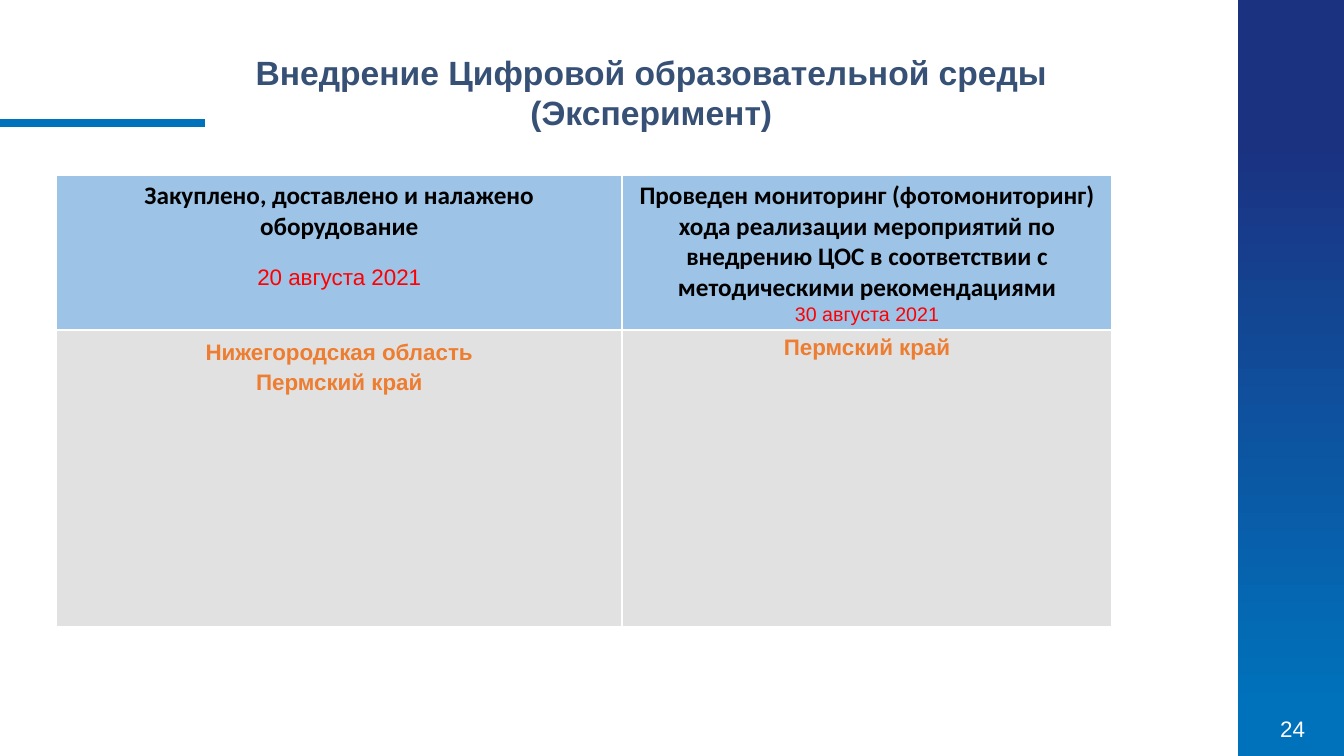
"""Build the slide on the digital education environment experiment."""
from lxml.etree import SubElement
from pptx import Presentation
from pptx.dml.color import RGBColor
from pptx.enum.shapes import MSO_CONNECTOR, MSO_SHAPE
from pptx.enum.text import MSO_ANCHOR, MSO_AUTO_SIZE, PP_ALIGN
from pptx.oxml.ns import qn
from pptx.util import Inches, Pt

WHITE = RGBColor(0xFF, 0xFF, 0xFF)
BLACK = RGBColor(0x00, 0x00, 0x00)
RED = RGBColor(0xFF, 0x00, 0x00)
ORANGE = RGBColor(0xED, 0x7D, 0x31)
NAVY = RGBColor(0x1B, 0x32, 0x81)
BLUE = RGBColor(0x00, 0x72, 0xBC)
TITLE_BLUE = RGBColor(0x37, 0x50, 0x75)
HEADER_FILL = RGBColor(0x9D, 0xC3, 0xE6)
BODY_FILL = RGBColor(0xE1, 0xE1, 0xE1)

COLUMN_WIDTHS = (5.61, 4.86)
ROW_HEIGHTS = (1.53, 2.94)
HEADERS = (
    ("Закуплено, доставлено и налажено оборудование", "20 августа 2021", 16, 17),
    ("Проведен мониторинг (фотомониторинг) хода реализации мероприятий по "
     "внедрению ЦОС в соответствии с методическими рекомендациями",
     "30 августа 2021", 14, 0),
)
REGIONS = (("Нижегородская область", "Пермский край"), ("Пермский край",))


def write_paragraph(frame, text, size, color, bold=False, font="Arial",
                    first=True, before=0, spacing=1.0):
    """Write one centred paragraph into a text frame."""
    paragraph = frame.paragraphs[0] if first else frame.add_paragraph()
    paragraph.alignment = PP_ALIGN.CENTER
    paragraph.line_spacing = spacing
    if before:
        paragraph.space_before = Pt(before)
    run = paragraph.add_run()
    run.text = text
    run.font.name = font
    run.font.size = Pt(size)
    run.font.bold = bold
    run.font.color.rgb = color


def add_title(slide):
    """Place and fill the title placeholder."""
    title = slide.shapes.title
    title.left, title.top = Inches(1.96), Inches(0.46)
    title.width, title.height = Inches(9), Inches(0.91)
    frame = title.text_frame
    frame.word_wrap = True
    frame.auto_size = MSO_AUTO_SIZE.NONE
    frame.vertical_anchor = MSO_ANCHOR.TOP
    write_paragraph(frame, "Внедрение Цифровой образовательной среды (Эксперимент)",
                    24, TITLE_BLUE, bold=True)


def add_side_band(slide):
    """Draw the gradient band along the right edge."""
    band = slide.shapes.add_shape(MSO_SHAPE.RECTANGLE, Inches(12.28), Inches(0),
                                  Inches(1.05), Inches(7.5))
    band.shadow.inherit = False
    band.line.fill.background()
    band.fill.gradient()
    band.fill.gradient_angle = 270
    stops = ((0.18, NAVY), (0.94, BLUE))
    for stop, (position, color) in zip(band.fill.gradient_stops, stops):
        stop.position = position
        stop.color.rgb = color


def add_page_number(slide):
    """Write the page number on the band."""
    box = slide.shapes.add_textbox(Inches(12.42), Inches(7.02),
                                   Inches(0.8), Inches(0.41))
    box.text_frame.word_wrap = True
    box.text_frame.vertical_anchor = MSO_ANCHOR.MIDDLE
    write_paragraph(box.text_frame, "24", 16, WHITE)


def add_accent_line(slide):
    """Draw the thick line beside the title."""
    line = slide.shapes.add_connector(MSO_CONNECTOR.STRAIGHT, Inches(0),
                                      Inches(1.22), Inches(2.03), Inches(1.22))
    line.line.color.rgb = BLUE
    line.line.width = Pt(6)
    SubElement(line._element.spPr, qn("a:effectLst"))


def style_cell(cell, color):
    """Give a cell white borders and a solid fill."""
    properties = cell._tc.get_or_add_tcPr()
    for side in ("lnL", "lnR", "lnT", "lnB"):
        border = SubElement(properties, qn(f"a:{side}"), w=str(Pt(1)))
        fill = SubElement(border, qn("a:solidFill"))
        SubElement(fill, qn("a:srgbClr"), val=str(WHITE))
    cell.fill.solid()
    cell.fill.fore_color.rgb = color


def add_stage_table(slide):
    """Add the table of stages, dates and regions."""
    table = slide.shapes.add_table(
        len(ROW_HEIGHTS), len(COLUMN_WIDTHS), Inches(0.56), Inches(1.74),
        Inches(sum(COLUMN_WIDTHS)), Inches(sum(ROW_HEIGHTS))).table
    for row, height in zip(table.rows, ROW_HEIGHTS):
        row.height = Inches(height)
    for index, width in enumerate(COLUMN_WIDTHS):
        table.columns[index].width = Inches(width)
        header, body = table.cell(0, index), table.cell(1, index)
        style_cell(header, HEADER_FILL)
        style_cell(body, BODY_FILL)
        stage, date, date_size, gap = HEADERS[index]
        write_paragraph(header.text_frame, stage, 18, BLACK, bold=True, font="Calibri")
        write_paragraph(header.text_frame, date, date_size, RED, first=False, before=gap)
        for number, region in enumerate(REGIONS[index]):
            write_paragraph(body.text_frame, region, 16, ORANGE, bold=True,
                            first=number == 0, spacing=1.2)
    last = table.cell(1, 1)
    last.margin_left = last.margin_right = Inches(0)
    last.margin_top = last.margin_bottom = Inches(0)


def main():
    """Build and save the presentation."""
    presentation = Presentation()
    presentation.slide_width = Inches(13.33)
    presentation.slide_height = Inches(7.5)
    slide = presentation.slides.add_slide(presentation.slide_layouts[5])
    add_side_band(slide)
    add_page_number(slide)
    add_accent_line(slide)
    add_stage_table(slide)
    add_title(slide)
    presentation.save("out.pptx")


if __name__ == "__main__":
    main()
